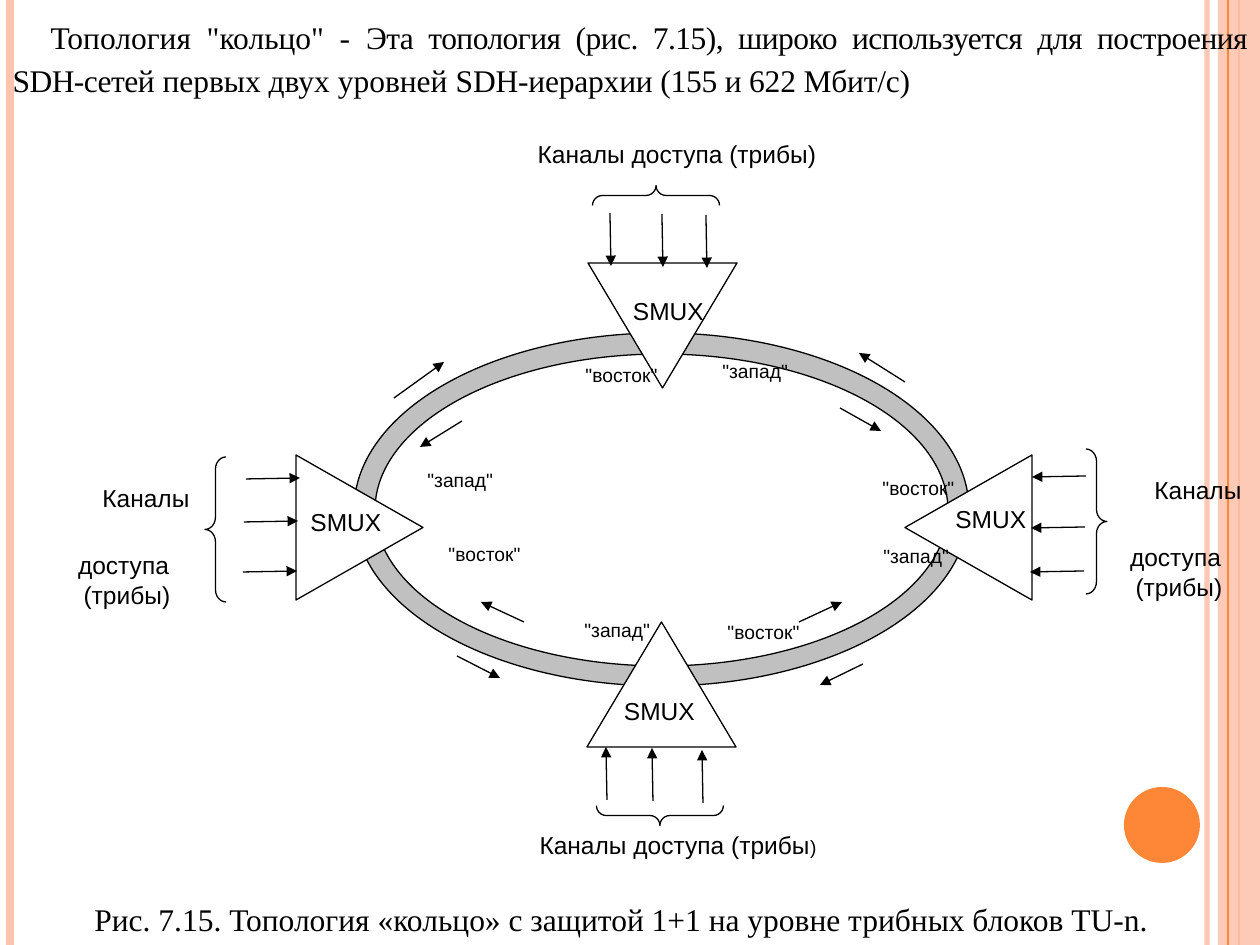
from pptx import Presentation
from pptx.dml.color import RGBColor
from pptx.enum.shapes import MSO_CONNECTOR, MSO_SHAPE
from pptx.enum.text import MSO_ANCHOR, MSO_AUTO_SIZE, PP_ALIGN
from pptx.oxml.ns import qn
from pptx.util import Pt
from lxml import etree

PX = 914400 // 126
INDENT = 38
LEFT, CENTER, JUSTIFY = PP_ALIGN.LEFT, PP_ALIGN.CENTER, PP_ALIGN.JUSTIFY
TRIANGLE, OVAL, RECT = MSO_SHAPE.ISOSCELES_TRIANGLE, MSO_SHAPE.OVAL, MSO_SHAPE.RECTANGLE
LEFT_BRACE, RIGHT_BRACE = MSO_SHAPE.LEFT_BRACE, MSO_SHAPE.RIGHT_BRACE
SERIF, SANS = "Times New Roman", "Arial"
COLORS = {"ink": "000000", "paper": "FFFFFF", "ring": "C0C0C0",
          "accent": "FE8637", "pale": "FEC3AE"}

# Text pieces: (text, size in pt, letter spacing in hundredths of a pt)
HEADING = [
    ('Топология "кольцо" - ', 18, 0),
    ("Эта топология (рис. 7.15), широко используется для построения SDH-сетей", 18, -30),
    (" первых двух уровней ", 18, 0),
    ("SDH-иерархии (155 и 622 Мбит/с)", 18, -10),
]
CAPTION = [("Рис. 7.15. Топология «кольцо» с защитой 1+1 на уровне трибных блоков TU-n.", 18, 0)]
SIDE_ACCESS = [("Каналы \vдоступа \v(трибы)", 14, 0)]
TOP_ACCESS = [("Каналы доступа (трибы)", 14, 0)]
BOTTOM_ACCESS = [("Каналы доступа (трибы", 14, 0), (")", 11, 0)]

# Vertical stripes: x, width in pt, colour, opacity in percent
STRIPES = [(1207, 3, "pale", 93), (10, 4.5, "pale", 100), (1239, 1.5, "accent", 100)]
EDGE_BAND = (1218, 0, 42, 945)
EDGE_LINE = (1228, 0.75, "accent", 100)
DOT = (1124, 787, 76, 76)
RING = [((354, 333, 615, 353), "ring"), ((375, 354, 573, 312), "paper")]

# One multiplexer per side; arrows run from each start by the same step
NODES = [
    {"triangle": (287, 464, 145, 127), "turn": 90,
     "name": (243, 501, 168, 62), "name_align": CENTER,
     "brace": (LEFT_BRACE, (205, 457, 21, 145), 0, 0.583),
     "arrows": [(246, 479), (244, 522), (243, 572)], "step": (54, -1),
     "access": SIDE_ACCESS, "access_box": (64, 483, 126, 92), "inset": 0,
     "west": (377, 462), "east": (396, 536)},
    {"triangle": (588, 263, 149, 125), "turn": 180,
     "name": (580, 290, 139, 62), "name_align": CENTER,
     "brace": (LEFT_BRACE, (646, 132, 20, 127), 90, 0.5),
     "arrows": [(610, 213), (662, 214), (706, 215)], "step": (1, 53),
     "access": TOP_ACCESS, "access_box": (478, 139, 360, 38), "inset": 13,
     "west": (672, 353), "east": (533, 357)},
    {"triangle": (896, 464, 145, 127), "turn": 270,
     "name": (905, 498, 149, 62), "name_align": LEFT,
     "brace": (RIGHT_BRACE, (1086, 449, 21, 145), 0, 0.583),
     "arrows": [(1086, 476), (1085, 527), (1084, 571)], "step": (-54, 1),
     "access": SIDE_ACCESS, "access_box": (1116, 475, 126, 92), "inset": 0,
     "west": (833, 538), "east": (830, 470)},
    {"triangle": (587, 622, 149, 125), "turn": 0,
     "name": (558, 690, 165, 62), "name_align": CENTER,
     "brace": (LEFT_BRACE, (650, 752, 20, 127), 270, 0.5),
     "arrows": [(607, 800), (653, 801), (703, 803)], "step": (-1, -53),
     "access": BOTTOM_ACCESS, "access_box": (479, 830, 360, 33), "inset": 13,
     "west": (534, 612), "east": (675, 614)},
]
RING_ARROWS = [
    ((394, 398), (444, 362)), ((462, 421), (420, 447)),
    ((840, 408), (881, 431)), ((905, 382), (859, 353)),
    ((524, 622), (481, 602)), ((457, 656), (500, 678)),
    ((799, 622), (842, 602)), ((863, 664), (820, 685)),
]
DIRECTION_SIZE = (139, 59)


def emu(lengths):
    return [n * PX for n in lengths]


def rgb(name):
    return RGBColor.from_string(COLORS[name])


def set_opacity(element, percent):
    if percent < 100:
        for color in element.iter(qn("a:srgbClr")):
            etree.SubElement(color, qn("a:alpha")).set("val", str(percent * 1000))


def add_figure(slide, kind, box, fill=None, outlined=True, turn=0):
    figure = slide.shapes.add_shape(kind, *emu(box))
    figure.shadow.inherit = False
    figure.rotation = turn
    if fill:
        figure.fill.solid()
        figure.fill.fore_color.rgb = rgb(fill)
    else:
        figure.fill.background()
    if outlined:
        figure.line.color.rgb = rgb("ink")
        figure.line.width = Pt(0.75)
    else:
        figure.line.fill.background()
    return figure


def add_line(slide, start, end, width=0.75, color="ink", opacity=100, arrow=False):
    line = slide.shapes.add_connector(MSO_CONNECTOR.STRAIGHT, *emu(start + end))
    line.line.color.rgb = rgb(color)
    line.line.width = Pt(width)
    properties = line._element.spPr
    set_opacity(properties, opacity)
    if arrow:
        etree.SubElement(properties.find(qn("a:ln")), qn("a:tailEnd")).set("type", "triangle")
    etree.SubElement(properties, qn("a:effectLst"))


def write(frame, pieces, align, font, spacing=None):
    """Fill a text frame with one paragraph whose first line is indented."""
    frame.word_wrap = True
    frame.vertical_anchor = MSO_ANCHOR.TOP
    paragraph = frame.paragraphs[0]
    paragraph.alignment = align
    layout = paragraph._p.get_or_add_pPr()
    layout.set("marL", "0")
    layout.set("indent", str(INDENT * PX))
    if spacing:
        paragraph.line_spacing = spacing
        frame.auto_size = MSO_AUTO_SIZE.SHAPE_TO_FIT_TEXT
    for text, size, tracking in pieces:
        for i, part in enumerate(text.split("\v")):
            if i:
                paragraph.add_line_break()
            run = paragraph.add_run()
            run.text = part
            run.font.name = font
            run.font.size = Pt(size)
            run.font.color.rgb = rgb("ink")
            if tracking:
                run._r.get_or_add_rPr().set("spc", str(tracking))
    return paragraph


def add_label(slide, box, pieces, align, inset=None, font=SANS, spacing=None):
    frame = slide.shapes.add_textbox(*emu(box)).text_frame
    if inset is not None:
        frame.margin_left = frame.margin_right = inset * PX
        frame.margin_top = frame.margin_bottom = 0
    write(frame, pieces, align, font, spacing)


def add_decor(slide):
    for x, width, color, opacity in STRIPES:
        add_line(slide, (x, 0), (x, 945), width, color, opacity)
    band = add_figure(slide, RECT, EDGE_BAND, "pale", outlined=False)
    set_opacity(band._element.spPr, 87)
    x, width, color, opacity = EDGE_LINE
    add_line(slide, (x, 0), (x, 945), width, color, opacity)
    add_figure(slide, OVAL, DOT, "accent", outlined=False)


def add_node(slide, node):
    add_figure(slide, TRIANGLE, node["triangle"], "paper", turn=node["turn"])
    kind, box, turn, curl = node["brace"]
    add_figure(slide, kind, box, turn=turn).adjustments[0] = curl
    dx, dy = node["step"]
    for x, y in node["arrows"]:
        add_line(slide, (x, y), (x + dx, y + dy), arrow=True)
    add_label(slide, node["name"], [("SMUX", 14, 0)], node["name_align"])
    add_label(slide, node["access_box"], node["access"], CENTER, node["inset"])
    add_label(slide, node["west"] + DIRECTION_SIZE, [('"запад"', 11, 0)], JUSTIFY)
    add_label(slide, node["east"] + DIRECTION_SIZE, [('"восток"', 11, 0)], CENTER)


def main():
    deck = Presentation()
    deck.slide_width, deck.slide_height = emu((1260, 945))
    slide = deck.slides.add_slide(deck.slide_layouts[5])

    add_decor(slide)
    heading = slide.shapes.title
    heading.left, heading.top, heading.width, heading.height = emu((0, 6, 1260, 101))
    slide.shapes._spTree.append(heading._element)
    write(heading.text_frame, HEADING, JUSTIFY, SERIF, 1.15).space_after = Pt(10)

    for box, fill in RING:
        add_figure(slide, OVAL, box, fill)
    for node in NODES:
        add_node(slide, node)
    for start, end in RING_ARROWS:
        add_line(slide, start, end, arrow=True)
    add_label(slide, (44, 888, 1208, 57), CAPTION, JUSTIFY, font=SERIF, spacing=1.15)
    deck.save("out.pptx")


if __name__ == "__main__":
    main()
